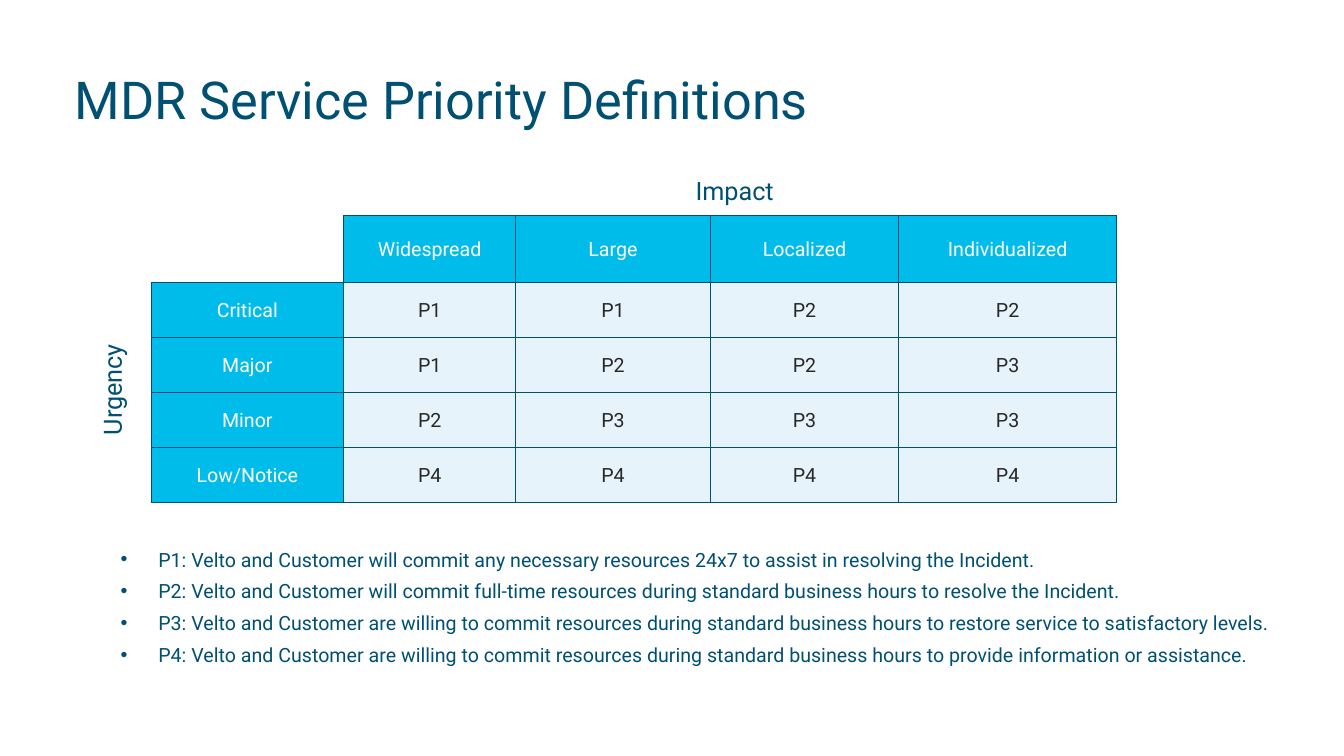
import lxml.etree
import pptx
import pptx.dml.color
import pptx.enum.text
import pptx.oxml.ns
import pptx.util

Cm = pptx.util.Cm
Pt = pptx.util.Pt
ALIGN = pptx.enum.text.PP_ALIGN
MIDDLE = pptx.enum.text.MSO_ANCHOR.MIDDLE

NAVY = pptx.dml.color.RGBColor(0x00, 0x50, 0x73)
CYAN = pptx.dml.color.RGBColor(0x00, 0xBC, 0xEB)
PALE = pptx.dml.color.RGBColor(0xE7, 0xF3, 0xFB)
DARK = pptx.dml.color.RGBColor(0x28, 0x28, 0x28)
WHITE = pptx.dml.color.RGBColor(0xFF, 0xFF, 0xFF)
FONT = "Roboto"

COLUMN_WIDTHS = [4.85, 4.34, 4.9, 4.75, 5.49]
ROW_HEIGHTS = [1.67] + [1.39] * 4
PRIORITIES = [
    ["", "Widespread", "Large", "Localized", "Individualized"],
    ["Critical", "P1", "P1", "P2", "P2"],
    ["Major", "P1", "P2", "P2", "P3"],
    ["Minor", "P2", "P3", "P3", "P3"],
    ["Low/Notice", "P4", "P4", "P4", "P4"],
]
DEFINITIONS = [
    "P1: Velto and Customer will commit any necessary resources 24x7 to assist in resolving the Incident.",
    "P2: Velto and Customer will commit full-time resources during standard business hours to resolve the Incident.",
    "P3: Velto and Customer are willing to commit resources during standard business hours"
    " to restore service to satisfactory levels.",
    "P4: Velto and Customer are willing to commit resources during standard business hours"
    " to provide information or assistance.",
]


def add_run(paragraph, text, size, color):
    run = paragraph.add_run()
    run.text = text
    run.font.name = FONT
    run.font.size = Pt(size)
    run.font.color.rgb = color


def add_text_frame(slide, left, top, width, height):
    box = slide.shapes.add_textbox(Cm(left), Cm(top), Cm(width), Cm(height))
    box.text_frame.word_wrap = True
    return box.text_frame


def add_title(slide, left, top, width, height):
    frame = add_text_frame(slide, left, top, width, height)
    frame.vertical_anchor = MIDDLE
    frame.paragraphs[0].line_spacing = 0.8
    add_run(frame.paragraphs[0], "MDR Service Priority Definitions", 37.3, NAVY)


def add_axis_label(slide, text, left, top, width, height, vertical=False):
    frame = add_text_frame(slide, left, top, width, height)
    if vertical:
        frame._txBody.bodyPr.set("vert", "vert270")
    frame.paragraphs[0].alignment = ALIGN.CENTER
    add_run(frame.paragraphs[0], text, 18, NAVY)


def set_borders(cell, visible_sides):
    """Draw navy lines on the given sides (letters of LRTB) and none on the others."""
    properties = cell._tc.get_or_add_tcPr()
    for index, side in enumerate("LRTB"):
        line = lxml.etree.Element(pptx.oxml.ns.qn(f"a:ln{side}"), w=str(Pt(1)))
        if side in visible_sides:
            fill = lxml.etree.SubElement(line, pptx.oxml.ns.qn("a:solidFill"))
            lxml.etree.SubElement(fill, pptx.oxml.ns.qn("a:srgbClr"), val=str(NAVY))
        else:
            lxml.etree.SubElement(line, pptx.oxml.ns.qn("a:noFill"))
        properties.insert(index, line)


def fill_cell(cell, text, is_header):
    cell.fill.solid()
    cell.fill.fore_color.rgb = CYAN if is_header else PALE
    cell.vertical_anchor = MIDDLE
    cell.margin_left = cell.margin_right = Cm(0.2)
    cell.margin_top = cell.margin_bottom = 0
    paragraph = cell.text_frame.paragraphs[0]
    paragraph.alignment = ALIGN.CENTER
    paragraph.line_spacing = 1.07
    add_run(paragraph, text, 14, WHITE if is_header else DARK)
    set_borders(cell, "LRTB")


def add_priority_table(slide, left, top):
    frame = slide.shapes.add_table(
        len(ROW_HEIGHTS), len(COLUMN_WIDTHS), Cm(left), Cm(top),
        Cm(sum(COLUMN_WIDTHS)), Cm(sum(ROW_HEIGHTS)))
    table = frame.table
    table.first_row = table.horz_banding = False
    for column, width in zip(table.columns, COLUMN_WIDTHS):
        column.width = Cm(width)
    for row, height in zip(table.rows, ROW_HEIGHTS):
        row.height = Cm(height)
    for row_index, texts in enumerate(PRIORITIES):
        for column_index, text in enumerate(texts):
            cell = table.cell(row_index, column_index)
            if text:
                fill_cell(cell, text, row_index == 0 or column_index == 0)
            else:
                cell.fill.background()
                set_borders(cell, "RB")


def add_definitions(slide, left, top, width, height):
    frame = add_text_frame(slide, left, top, width, height)
    for index, definition in enumerate(DEFINITIONS):
        paragraph = frame.paragraphs[0] if index == 0 else frame.add_paragraph()
        if index < len(DEFINITIONS) - 1:
            paragraph.space_after = Pt(6)
        properties = paragraph._p.get_or_add_pPr()
        properties.set("marL", str(Cm(0.95)))
        properties.set("indent", str(-Cm(0.95)))
        lxml.etree.SubElement(properties, pptx.oxml.ns.qn("a:buFont"), typeface="Arial")
        lxml.etree.SubElement(properties, pptx.oxml.ns.qn("a:buChar"), char="•")
        add_run(paragraph, definition, 14, NAVY)


def main():
    presentation = pptx.Presentation()
    presentation.slide_width = Cm(33.87)
    presentation.slide_height = Cm(19.05)
    slide = presentation.slides.add_slide(presentation.slide_layouts[6])
    add_title(slide, 1.63, 1.27, 30.91, 2.72)
    add_priority_table(slide, 3.81, 5.44)
    add_axis_label(slide, "Urgency", 2.31, 6.96, 1.27, 5.72, vertical=True)
    add_axis_label(slide, "Impact", 9.5, 4.29, 18.03, 1.02)
    add_definitions(slide, 2.79, 13.67, 30.07, 3.3)
    presentation.save("out.pptx")


if __name__ == "__main__":
    main()
